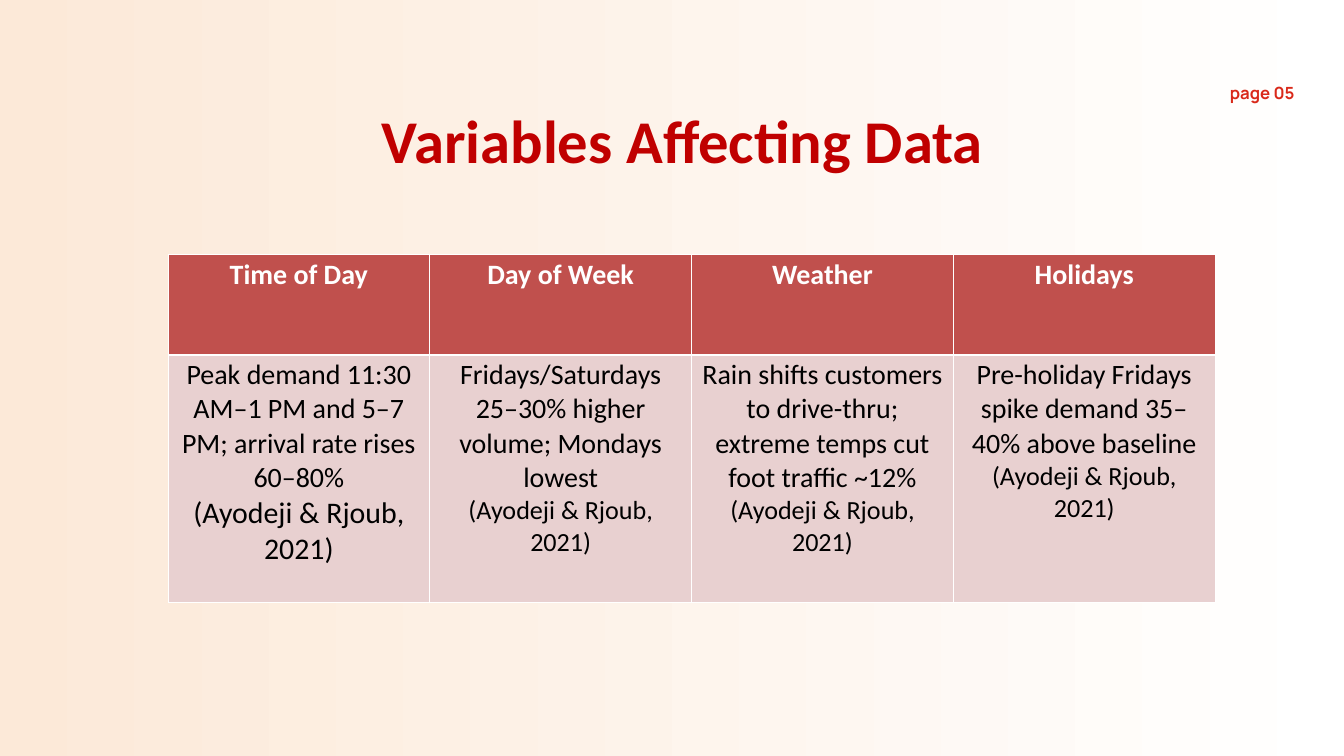
import pptx
import pptx.dml.color
import pptx.enum.text
import pptx.oxml
import pptx.oxml.ns
import pptx.util

Pt = pptx.util.Pt
RGB = pptx.dml.color.RGBColor
ALIGN = pptx.enum.text.PP_ALIGN

PEACH = RGB(0xFC, 0xE9, 0xD8)
WHITE = RGB(0xFF, 0xFF, 0xFF)
BLACK = RGB(0x00, 0x00, 0x00)
SCARLET = RGB(0xD9, 0x29, 0x1A)
CRIMSON = RGB(0xC0, 0x00, 0x00)
BRICK = RGB(0xC0, 0x50, 0x4D)
ROSE = RGB(0xE8, 0xD0, 0xD0)

PAGE = {"name": "Manrope", "size": Pt(18), "bold": True}
TITLE = {"name": "Calibri", "size": Pt(65), "bold": True}
HEAD = {"name": "Calibri", "size": Pt(30), "bold": True}
BODY = {"name": "Calibri", "size": Pt(30), "bold": False}

CITE = "(Ayodeji & Rjoub, 2021)"
# Heading, effect, size of the citation
FACTORS = [
    ("Time of Day", "Peak demand 11:30 AM–1 PM and 5–7 PM; arrival rate rises 60–80%", 32),
    ("Day of Week", "Fridays/Saturdays 25–30% higher volume; Mondays lowest", 28),
    ("Weather", "Rain shifts customers to drive-thru; extreme temps cut foot traffic ~12%", 28),
    ("Holidays", "Pre-holiday Fridays spike demand 35–40% above baseline", 28),
]


def set_all(item, values):
    for key, value in values.items():
        setattr(item, key, value)


def write(para, text, font, color, **layout):
    set_all(para, layout)
    run = para.add_run()
    run.text = text
    set_all(run.font, font)
    run.font.color.rgb = color


def add_label(slide, box, text, font, color, **layout):
    frame = slide.shapes.add_textbox(*map(Pt, box)).text_frame
    set_all(frame, {"word_wrap": True, "margin_left": 0, "margin_top": 0,
                    "margin_right": 0, "margin_bottom": 0})
    write(frame.paragraphs[0], text, font, color, **layout)


def add_edges(cell, widths):
    """Draw white cell borders; widths maps a side (L, R, T, B) to points."""
    props = cell._tc.get_or_add_tcPr()
    for side, width in widths.items():
        props.append(pptx.oxml.parse_xml(
            f'<a:ln{side} {pptx.oxml.ns.nsdecls("a")} w="{Pt(width)}">'
            f'<a:solidFill><a:srgbClr val="{WHITE}"/></a:solidFill></a:ln{side}>'))


def fill_cell(cell, color, lower):
    add_edges(cell, {"L": 1, "R": 1, "T": 4 - lower, "B": lower})
    cell.fill.solid()
    cell.fill.fore_color.rgb = color
    return cell.text_frame


def add_grid(slide):
    wide, rows = 280.5, (107.3, 265)
    count = len(FACTORS)
    shape = slide.shapes.add_table(2, count, Pt(180), Pt(272.8),
                                   Pt(wide * count), Pt(sum(rows)))
    table = shape.table
    for row, height in zip(table.rows, rows):
        row.height = Pt(height)
    for col, (head, effect, size) in enumerate(FACTORS):
        table.columns[col].width = Pt(wide)
        top = fill_cell(table.cell(0, col), BRICK, 3)
        write(top.paragraphs[0], head, HEAD, WHITE, alignment=ALIGN.CENTER)
        body = fill_cell(table.cell(1, col), ROSE, 1)
        write(body.paragraphs[0], effect, BODY, BLACK, alignment=ALIGN.CENTER)
        write(body.add_paragraph(), CITE, {**BODY, "size": Pt(size)}, BLACK,
              alignment=ALIGN.CENTER)


def paint_back(slide):
    fill = slide.background.fill
    fill.gradient()
    fill.gradient_angle = 0
    for stop, place, color in zip(fill.gradient_stops, (0, 1), (PEACH, WHITE)):
        stop.position = place
        stop.color.rgb = color


def main():
    deck = pptx.Presentation()
    deck.slide_width, deck.slide_height = Pt(1440), Pt(810)
    slide = deck.slides.add_slide(deck.slide_layouts[6])
    paint_back(slide)
    add_label(slide, (1317.6, 95.8, 82.8, 16.6), "page 05", PAGE, SCARLET,
              line_spacing=Pt(14.9))
    add_label(slide, (228.2, 105.1, 1006.6, 80.6), "Variables Affecting Data",
              TITLE, CRIMSON, alignment=ALIGN.CENTER, line_spacing=1.07,
              space_after=Pt(8))
    add_grid(slide)
    deck.save("out.pptx")


if __name__ == "__main__":
    main()
